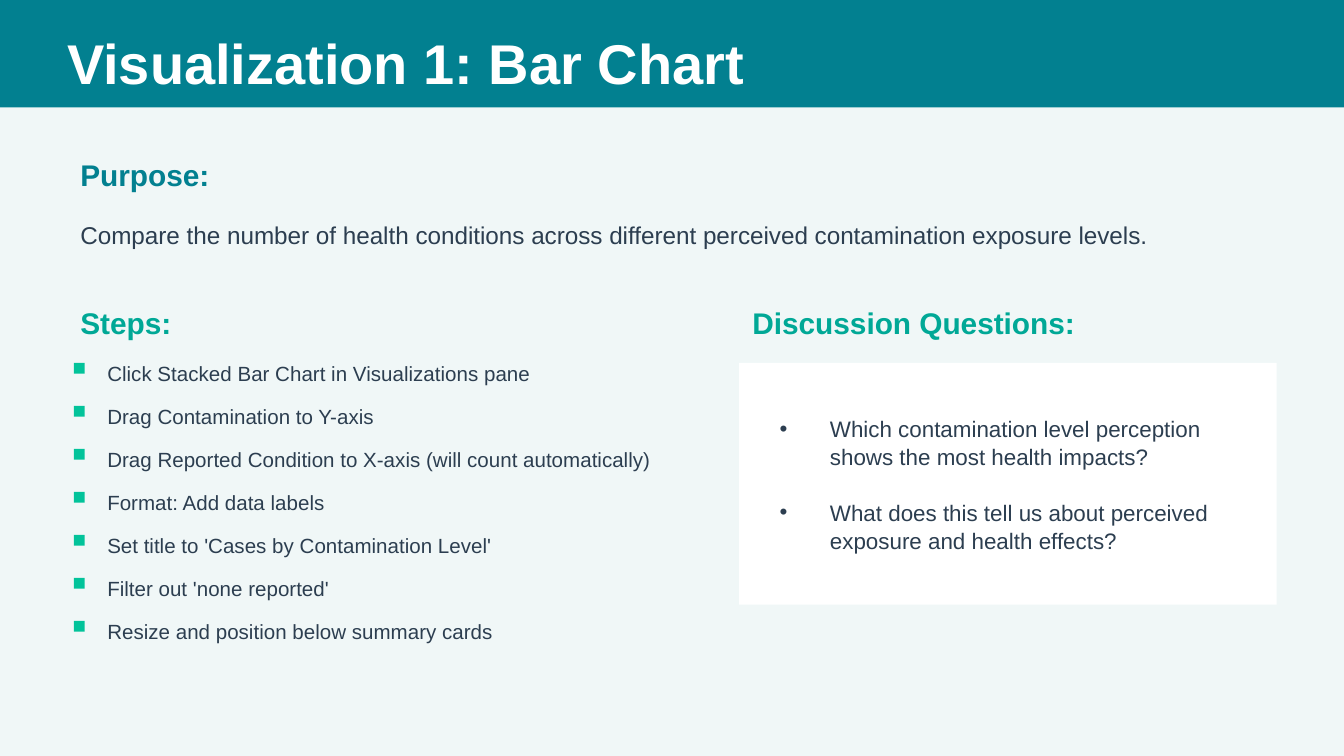
"""Build the slide that teaches the first visualization, a bar chart."""
from pptx import Presentation
from pptx.dml.color import RGBColor
from pptx.enum.shapes import MSO_SHAPE as Shape
from pptx.enum.text import MSO_ANCHOR as Anchor, MSO_AUTO_SIZE as AutoSize, PP_ALIGN as Align
from pptx.util import Pt

PX = 4572
COLORS = {
    "page": "F0F7F7",
    "banner": "028090",
    "heading": "00A896",
    "marker": "02C39A",
    "ink": "2C3E50",
    "white": "FFFFFF",
}
STEPS = [
    "Click Stacked Bar Chart in Visualizations pane",
    "Drag Contamination to Y-axis",
    "Drag Reported Condition to X-axis (will count automatically)",
    "Format: Add data labels",
    "Set title to 'Cases by Contamination Level'",
    "Filter out 'none reported'",
    "Resize and position below summary cards",
]
QUESTIONS = [
    "Which contamination level perception shows the most health impacts?",
    "What does this tell us about perceived exposure and health effects?",
]


class SlideBuilder:
    font = "Arial"

    def __init__(self, page):
        self.page = page
        page.background.fill.solid()
        page.background.fill.fore_color.rgb = self.color("page")

    def color(self, name):
        return RGBColor.from_string(COLORS[name])

    def place(self, item, left, top, width, height):
        item.left, item.top = left * PX, top * PX
        item.width, item.height = width * PX, height * PX

    def add_text(self, para, text, size, color, bold=False):
        para.alignment = Align.LEFT
        span = para.add_run()
        span.text = text
        span.font.name = self.font
        span.font.size = Pt(size)
        span.font.bold = bold
        span.font.color.rgb = self.color(color)

    def frame(self, item):
        box = item.text_frame
        box.word_wrap = True
        box.auto_size = AutoSize.NONE
        box.vertical_anchor = Anchor.MIDDLE
        return box

    def rect(self, left, top, width, height, color):
        item = self.page.shapes.add_shape(
            Shape.RECTANGLE, left * PX, top * PX, width * PX, height * PX)
        item.shadow.inherit = False
        item.fill.solid()
        item.fill.fore_color.rgb = self.color(color)
        item.line.fill.background()

    def label(self, left, top, width, height, text, size, color="ink", bold=False):
        item = self.page.shapes.add_textbox(left * PX, top * PX, width * PX, height * PX)
        self.add_text(self.frame(item).paragraphs[0], text, size, color, bold)

    def holder(self, index, *area):
        item = self.page.placeholders[index]
        self.page.shapes._spTree.append(item._element)
        self.place(item, *area)
        return self.frame(item)

    def title(self, text, *area):
        box = self.holder(0, *area)
        box.margin_left = box.margin_right = box.margin_top = box.margin_bottom = 0
        self.add_text(box.paragraphs[0], text, 30, "white", True)

    def bullets(self, texts, *area):
        box = self.holder(1, *area)
        indent = 75 * PX
        for number, text in enumerate(texts):
            para = box.add_paragraph() if number else box.paragraphs[0]
            props = para._p.get_or_add_pPr()
            props.set("marL", str(indent))
            props.set("indent", str(-indent))
            para.line_spacing = 1.05
            para.space_before = Pt(14.5 if number else 0)
            self.add_text(para, text, 12, "ink")


def main():
    deck = Presentation()
    deck.slide_width, deck.slide_height = 2000 * PX, 1125 * PX
    slide = SlideBuilder(deck.slides.add_slide(deck.slide_layouts[1]))

    slide.rect(0, 0, 2000, 160, "banner")
    slide.title("Visualization 1: Bar Chart", 100, 32, 1800, 120)

    slide.label(100, 220, 1800, 80, "Purpose:", 16, "banner", True)
    purpose = ("Compare the number of health conditions across different "
               "perceived contamination exposure levels.")
    slide.label(100, 310, 1800, 80, purpose, 13)

    slide.label(100, 440, 1000, 80, "Steps:", 16, "heading", True)
    for row, step in enumerate(STEPS):
        top = 530 + 64 * row
        slide.label(140, top, 920, 50, step, 11)
        slide.rect(110, top + 10, 16, 16, "marker")

    slide.label(1100, 440, 800, 80, "Discussion Questions:", 16, "heading", True)
    slide.rect(1100, 540, 800, 360, "white")
    slide.bullets(QUESTIONS, 1140, 570, 720, 300)

    deck.save("out.pptx")


if __name__ == "__main__":
    main()
